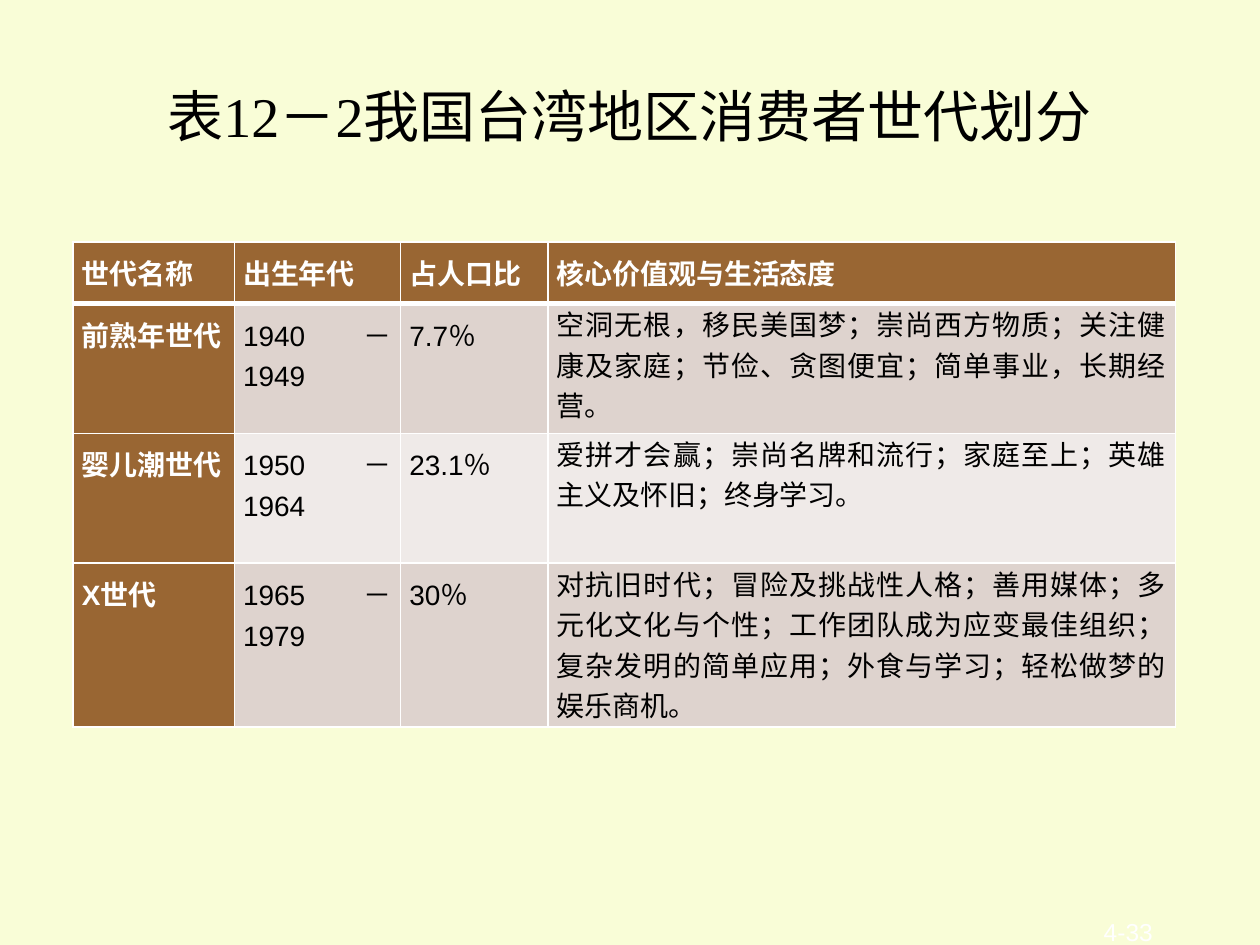
"""Builds the slide with the table of consumer generations."""
from lxml import etree
from pptx import Presentation
from pptx import util as u
from pptx.dml.color import RGBColor
from pptx.enum import text
from pptx.oxml import ns

CREAM = RGBColor(0xF9, 0xFD, 0xD7)
BROWN = RGBColor(0x99, 0x66, 0x33)
TAUPE = RGBColor(0xDE, 0xD3, 0xCE)
PALE = RGBColor(0xEF, 0xEA, 0xE8)
WHITE = RGBColor(0xFF, 0xFF, 0xFF)
BLACK = RGBColor(0x00, 0x00, 0x00)

HEADINGS = ["世代名称", "出生年代", "占人口比", "核心价值观与生活态度"]
GENERATIONS = [
    ["前熟年世代", "1940－1949", "7.7％",
     "空洞无根，移民美国梦；崇尚西方物质；关注健康及家庭；节俭、贪图便宜；简单事业，长期经营。"],
    ["婴儿潮世代", "1950－1964", "23.1％",
     "爱拼才会赢；崇尚名牌和流行；家庭至上；英雄主义及怀旧；终身学习。"],
    ["X世代", "1965－1979", "30％",
     "对抗旧时代；冒险及挑战性人格；善用媒体；多元化文化与个性；工作团队成为应变最佳组织；"
     "复杂发明的简单应用；外食与学习；轻松做梦的娱乐商机。"],
]
COLUMN_SHARES = [12.8, 13.2, 11.7, 49.8]
ROW_SHARES = [6.53, 13.73, 13.73, 17.33]


class Deck:
    """Holds the style and the current slide; lengths are percent of the slide."""

    def __init__(self, width, height):
        self.prs = Presentation()
        self.prs.slide_width, self.prs.slide_height = u.Inches(width), u.Inches(height)
        self.slide = self.prs.slides.add_slide(self.prs.slide_layouts[5])
        fill = self.slide.background.fill
        fill.solid()
        fill.fore_color.rgb = CREAM

    def across(self, share):
        return u.Emu(round(self.prs.slide_width * share / 100))

    def down(self, share):
        return u.Emu(round(self.prs.slide_height * share / 100))

    def area(self, left, top, width, height):
        return self.across(left), self.down(top), self.across(width), self.down(height)

    def add_words(self, paragraph, words, size, color, font="Arial", bold=False):
        run = paragraph.add_run()
        run.text = words
        run.font.name, run.font.size, run.font.bold = font, u.Pt(size), bold
        run.font.color.rgb = color

    def title(self, words, area):
        heading = self.slide.shapes.title
        heading.left, heading.top, heading.width, heading.height = self.area(*area)
        heading.text_frame.vertical_anchor = text.MSO_ANCHOR.MIDDLE
        paragraph = heading.text_frame.paragraphs[0]
        paragraph.alignment = text.PP_ALIGN.CENTER
        self.add_words(paragraph, words, 32, BLACK, "Times New Roman")

    def page_number(self, words, area):
        frame = self.slide.shapes.add_textbox(*self.area(*area)).text_frame
        frame.word_wrap = True
        frame.margin_left = frame.margin_right = frame.margin_top = frame.margin_bottom = 0
        paragraph = frame.paragraphs[0]
        paragraph.alignment = text.PP_ALIGN.RIGHT
        self.add_words(paragraph, words, 14, WHITE)

    def table(self, rows, left, top, columns, heights):
        area = self.area(left, top, sum(columns), sum(heights))
        grid = self.slide.shapes.add_table(len(rows), len(columns), *area).table
        for column, share in zip(grid.columns, columns):
            column.width = self.across(share)
        for row, share in zip(grid.rows, heights):
            row.height = self.down(share)
        for r, row in enumerate(rows):
            for c, words in enumerate(row):
                self.cell(grid.cell(r, c), words, r, c, c == len(columns) - 1)

    def cell(self, cell, words, row, column, is_description):
        is_header = row == 0
        is_label = is_header or column == 0
        cell.margin_left = cell.margin_right = u.Inches(0.07)
        cell.margin_top = cell.margin_bottom = 0
        cell.fill.solid()
        cell.fill.fore_color.rgb = BROWN if is_label else TAUPE if row % 2 else PALE
        paragraph = cell.text_frame.paragraphs[0]
        paragraph.alignment = text.PP_ALIGN.JUSTIFY
        if is_header or not is_description:
            paragraph.line_spacing, paragraph.space_after = 1.25, u.Pt(6)
        self.add_words(paragraph, words, 16, WHITE if is_label else BLACK, bold=is_label)
        self.borders(cell, {"L": 1, "R": 1, "T": 3 if row == 1 else 1, "B": 3 if is_header else 1})

    def borders(self, cell, widths):
        properties = cell._tc.get_or_add_tcPr()
        for place, (side, width) in enumerate(widths.items()):
            line = etree.Element(ns.qn(f"a:ln{side}"), w=str(u.Pt(width)))
            solid = etree.SubElement(line, ns.qn("a:solidFill"))
            etree.SubElement(solid, ns.qn("a:srgbClr"), val=str(WHITE))
            properties.insert(place, line)


def main():
    deck = Deck(10, 7.5)
    deck.title("表12－2我国台湾地区消费者世代划分", (7.5, 3.33, 85, 17.73))
    deck.table([HEADINGS, *GENERATIONS], 5.8, 25.6, COLUMN_SHARES, ROW_SHARES)
    deck.page_number("4-33", (81.5, 97, 10, 3))
    deck.prs.save("out.pptx")


if __name__ == "__main__":
    main()
